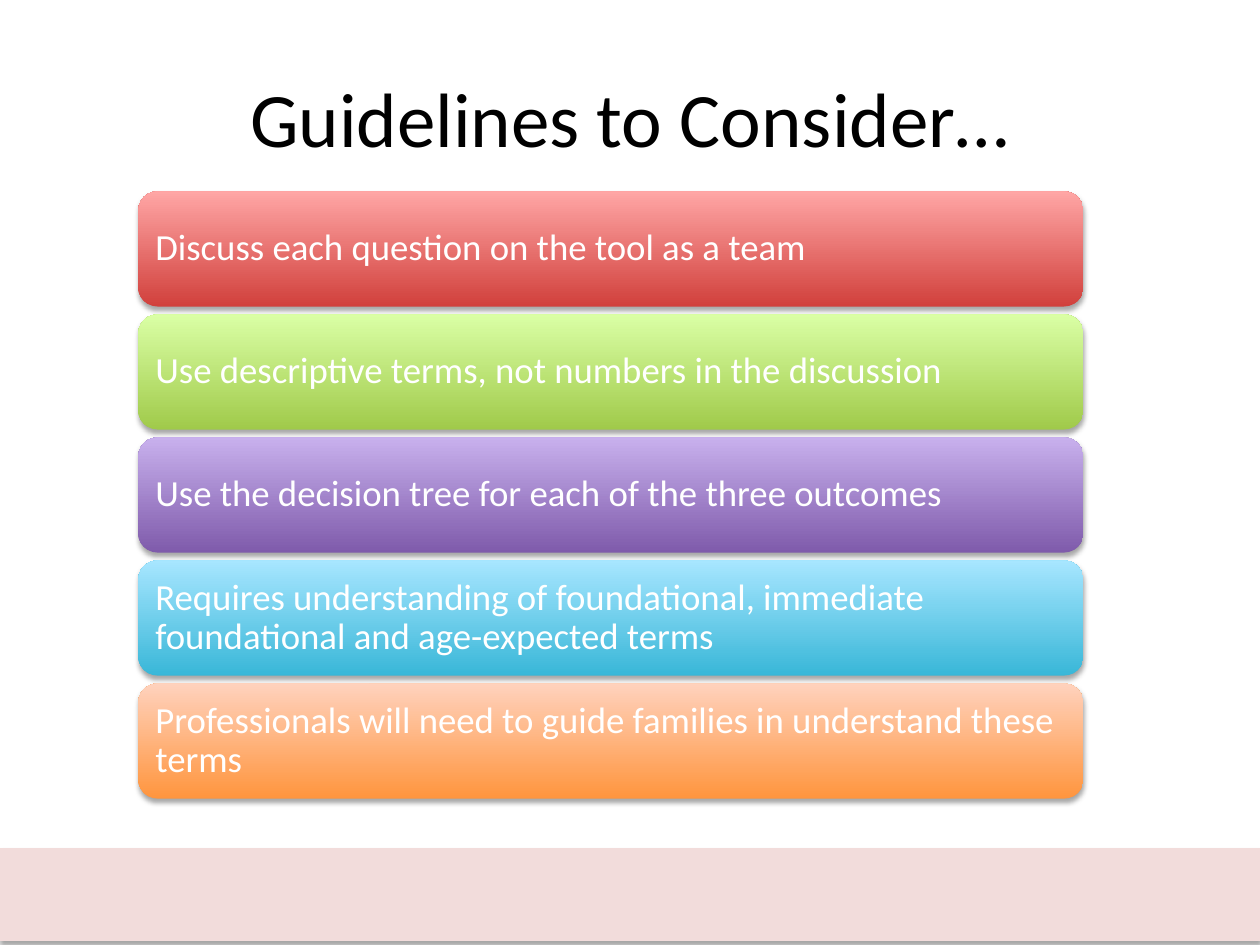
from lxml import etree
from pptx import Presentation
from pptx import util as u
from pptx.dml.color import RGBColor
from pptx.enum import shapes, text
from pptx.oxml.ns import qn

TITLE = "Guidelines to Consider…"
# wording, colour at the bottom, colour at the top
GUIDELINES = [
    ("Discuss each question on the tool as a team",
     RGBColor(0xD1, 0x40, 0x3C), RGBColor(0xFF, 0xA6, 0xA5)),
    ("Use descriptive terms, not numbers in the discussion",
     RGBColor(0xA0, 0xCA, 0x4A), RGBColor(0xDA, 0xFF, 0xA5)),
    ("Use the decision tree for each of the three outcomes",
     RGBColor(0x7F, 0x5B, 0xAB), RGBColor(0xC8, 0xB0, 0xED)),
    ("Requires understanding of foundational, immediate foundational "
     "and age-expected terms",
     RGBColor(0x39, 0xB7, 0xD8), RGBColor(0xA7, 0xE6, 0xFF)),
    ("Professionals will need to guide families in understand these terms",
     RGBColor(0xFF, 0x95, 0x3E), RGBColor(0xFF, 0xD2, 0xBD)),
]
BLACK = RGBColor(0, 0, 0)
WHITE = RGBColor(0xFF, 0xFF, 0xFF)
PINK = RGBColor(0xF2, 0xDC, 0xDB)

BAR_LEFT, BAR_TOP = u.Cm(2.79), u.Cm(3.86)
BAR_WIDTH, BAR_HEIGHT = u.Cm(19.05), u.Cm(2.32)
BAR_PITCH = u.Cm(2.48)
INSET = u.Cm(0.23)


def add_shadow(sp):
    """Give the shape a soft shadow straight below it."""
    sp.shadow.inherit = False
    effects = sp._element.spPr.find(qn("a:effectLst"))
    shadow = etree.SubElement(
        effects, qn("a:outerShdw"), blurRad=str(u.Pt(3.1)),
        dist=str(u.Pt(1.8)), dir="5400000", rotWithShape="0")
    colour = etree.SubElement(shadow, qn("a:srgbClr"), val="000000")
    etree.SubElement(colour, qn("a:alpha"), val="35000")


def write(sp, wording, size, colour, align, frame=None, spacing=None):
    tf = sp.text_frame
    settings = {"word_wrap": True, "vertical_anchor": text.MSO_ANCHOR.MIDDLE}
    for name, value in {**settings, **(frame or {})}.items():
        setattr(tf, name, value)
    p = tf.paragraphs[0]
    p.alignment = align
    p.line_spacing = spacing
    r = p.add_run()
    r.text = wording
    r.font.name = "Calibri"
    r.font.size = u.Pt(size)
    r.font.color.rgb = colour


prs = Presentation()
prs.slide_width, prs.slide_height = u.Cm(25.4), u.Cm(19.05)
s = prs.slides.add_slide(prs.slide_layouts[6])

band = s.shapes.add_shape(shapes.MSO_SHAPE.RECTANGLE, 0, u.Cm(17.1),
                          prs.slide_width, u.Cm(1.86))
band.fill.solid()
band.fill.fore_color.rgb = PINK
band.line.color.rgb = PINK
band.line.width = u.Pt(0.75)
add_shadow(band)

title = s.shapes.add_textbox(u.Cm(1.27), u.Cm(0.76), u.Cm(22.86), u.Cm(3.18))
write(title, TITLE, 44, BLACK, text.PP_ALIGN.CENTER)

insets = {f"margin_{side}": INSET for side in ("left", "top", "right", "bottom")}
for i, (wording, bottom, top) in enumerate(GUIDELINES):
    bar = s.shapes.add_shape(shapes.MSO_SHAPE.ROUNDED_RECTANGLE, BAR_LEFT,
                             BAR_TOP + i * BAR_PITCH, BAR_WIDTH, BAR_HEIGHT)
    bar.fill.gradient()
    bar.fill.gradient_angle = 90
    for stop, colour in zip(bar.fill.gradient_stops, (bottom, top)):
        stop.color.rgb = colour
    bar.line.fill.background()
    add_shadow(bar)
    write(bar, wording, 21, WHITE, text.PP_ALIGN.LEFT, insets, 0.9)

prs.save("out.pptx")
